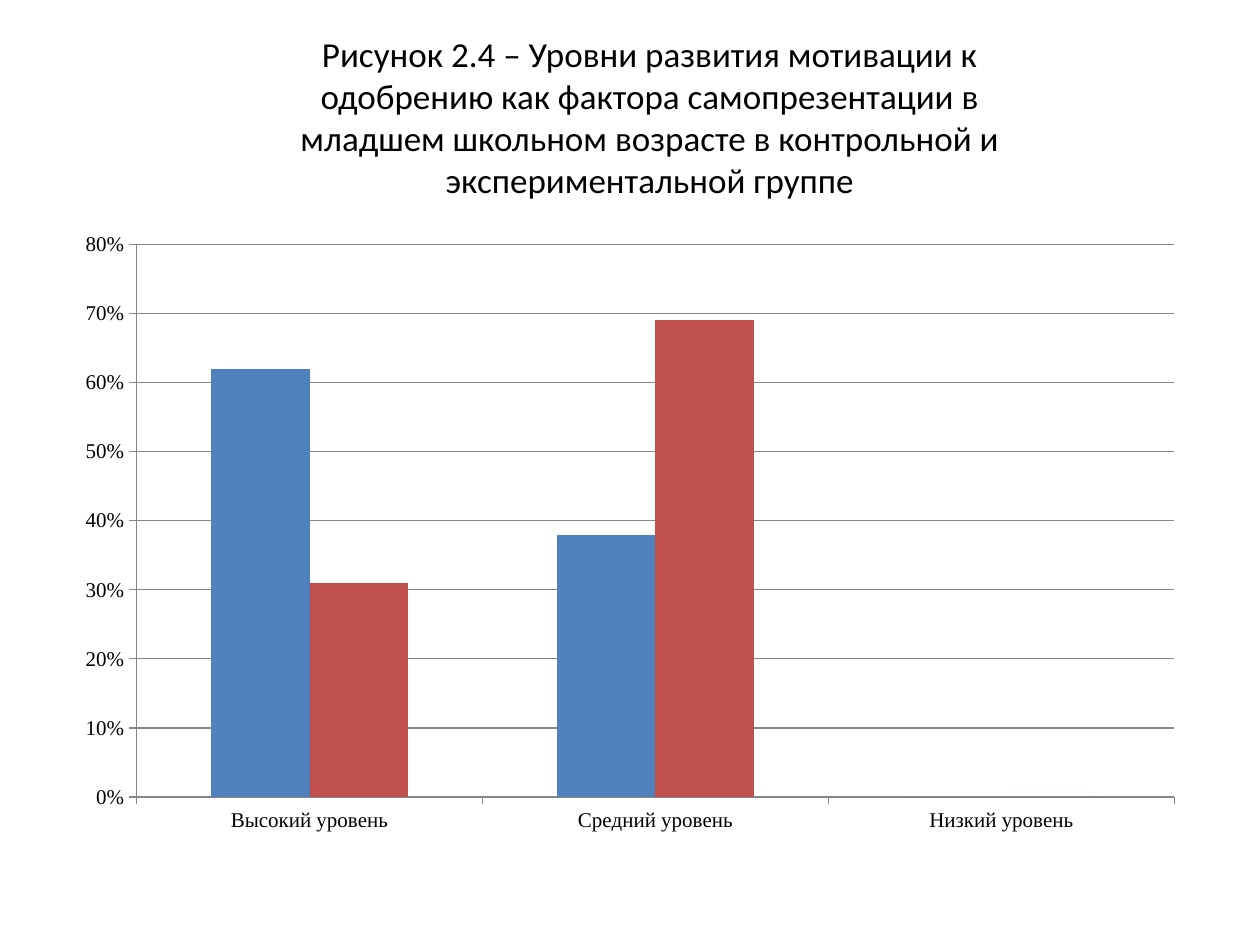
from pptx import Presentation
from pptx.chart.data import CategoryChartData
from pptx.dml.color import RGBColor
from pptx.enum.chart import XL_CHART_TYPE, XL_TICK_MARK
from pptx.enum.text import MSO_ANCHOR, PP_ALIGN
from pptx.util import Cm, Pt

COLUMN = XL_CHART_TYPE.COLUMN_CLUSTERED
OUT = XL_TICK_MARK.OUTSIDE
NONE = XL_TICK_MARK.NONE
MIDDLE = MSO_ANCHOR.MIDDLE
CENTER = PP_ALIGN.CENTER

BLACK = RGBColor(0x00, 0x00, 0x00)
GRAY = RGBColor(0x86, 0x86, 0x86)
BLUE = RGBColor(0x4F, 0x81, 0xBD)
RED = RGBColor(0xC0, 0x50, 0x4D)

TITLE = (
    "Рисунок 2.4 – Уровни развития мотивации к одобрению как фактора "
    "самопрезентации в младшем школьном возрасте в контрольной и "
    "экспериментальной группе"
)
LEVELS = ["Высокий уровень", "Средний уровень", "Низкий уровень"]
GROUPS = [
    ("Series 1", (0.62, 0.38, 0), BLUE),
    ("Series 2", (0.31, 0.69, 0), RED),
]


def set_font(font, name, size):
    """Give a font its name, size and black colour."""
    font.name = name
    font.size = Pt(size)
    font.color.rgb = BLACK


def set_line(line):
    """Draw a thin gray line."""
    line.color.rgb = GRAY
    line.width = Pt(0.75)


def add_title(slide, box):
    """Place the centred title in the box."""
    frame = slide.shapes.add_textbox(*box).text_frame
    frame.word_wrap = True
    frame.vertical_anchor = MIDDLE
    para = frame.paragraphs[0]
    para.alignment = CENTER
    run = para.add_run()
    run.text = TITLE
    set_font(run.font, "Calibri", 20)


def style_axis(axis):
    """Set the ticks, labels and line of an axis."""
    axis.major_tick_mark = OUT
    axis.minor_tick_mark = NONE
    set_font(axis.tick_labels.font, "Times New Roman", 12)
    set_line(axis.format.line)


def add_levels(slide, box):
    """Place the column chart of levels in the box."""
    data = CategoryChartData(number_format="0%")
    data.categories = LEVELS
    for name, values, _ in GROUPS:
        data.add_series(name, values)
    chart = slide.shapes.add_chart(COLUMN, *box, data).chart
    chart.has_legend = False
    chart.has_title = False
    set_font(chart.font, "Calibri", 10)

    plot = chart.plots[0]
    plot.gap_width = 150
    plot.overlap = 0
    plot.vary_by_categories = False
    for series, (_, _, color) in zip(plot.series, GROUPS):
        series.format.fill.solid()
        series.format.fill.fore_color.rgb = color

    style_axis(chart.category_axis)
    scale = chart.value_axis
    style_axis(scale)
    scale.minimum_scale = 0
    scale.maximum_scale = 0.8
    scale.major_unit = 0.1
    scale.has_major_gridlines = True
    set_line(scale.major_gridlines.format.line)
    scale.tick_labels.number_format = "0%"
    scale.tick_labels.number_format_is_linked = False


def main():
    """Build the slide and save it."""
    deck = Presentation()
    deck.slide_width = Cm(25.4)
    deck.slide_height = Cm(19.05)
    slide = deck.slides.add_slide(deck.slide_layouts[6])
    add_title(slide, (Cm(5.1), Cm(0.76), Cm(16), Cm(3.18)))
    add_levels(slide, (Cm(1.27), Cm(4.45), Cm(22.86), Cm(12.57)))
    deck.save("out.pptx")


if __name__ == "__main__":
    main()
